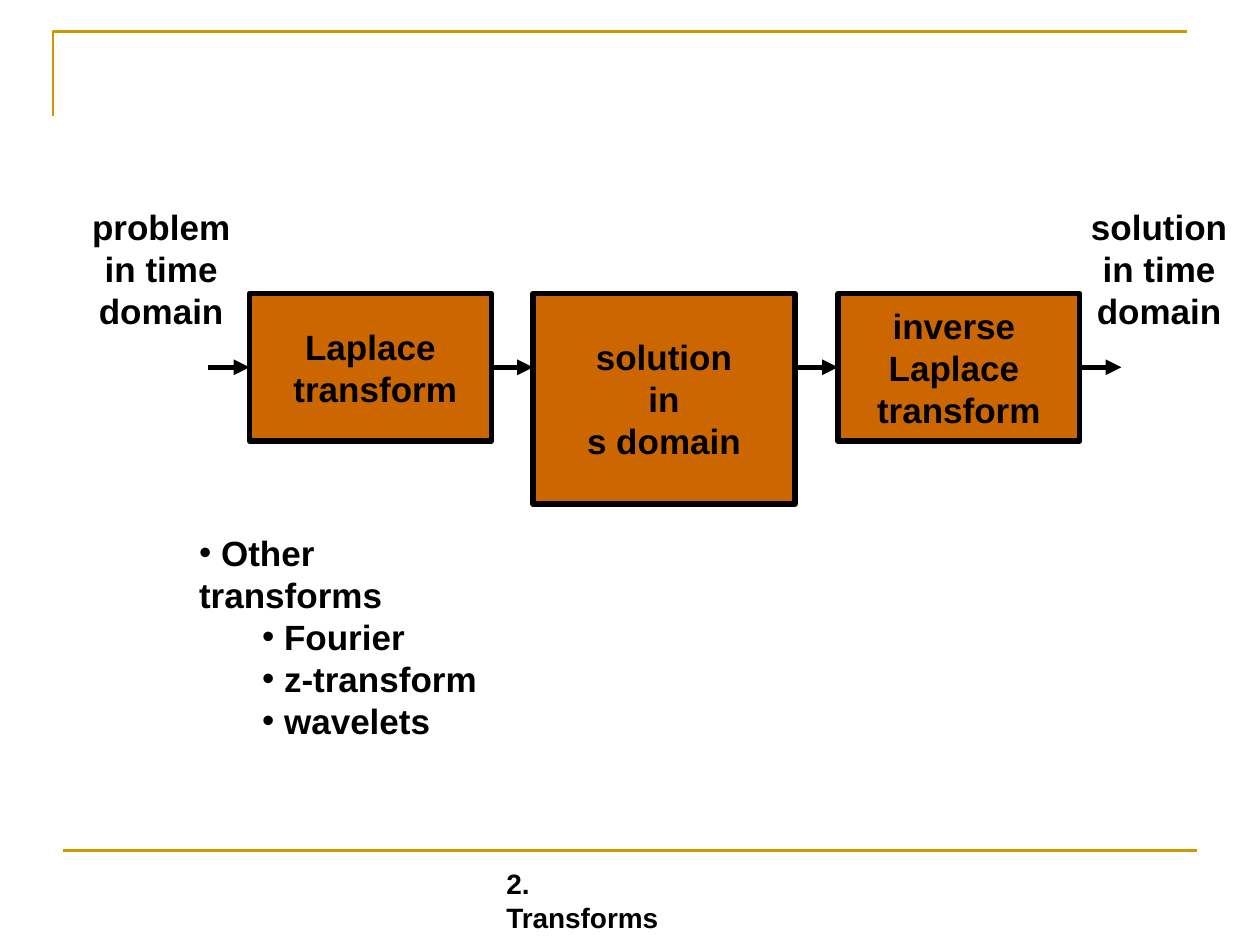
from dataclasses import dataclass

import pptx
import pptx.dml.color
import pptx.enum.shapes
import pptx.enum.text
import pptx.oxml.ns
import pptx.util
from lxml import etree

Inches = pptx.util.Inches
Pt = pptx.util.Pt
RGB = pptx.dml.color.RGBColor
Align = pptx.enum.text.PP_ALIGN
Anchor = pptx.enum.text.MSO_ANCHOR
qn = pptx.oxml.ns.qn


@dataclass(frozen=True)
class Theme:
    font: str = "Arial"
    ink: RGB = RGB(0, 0, 0)
    block: RGB = RGB(0xCC, 0x66, 0x00)
    gold: RGB = RGB(0xCC, 0x99, 0x00)
    text: int = 20
    foot: int = 16
    rule: float = 1.5
    edge: int = 3


@dataclass(frozen=True)
class Box:
    left: float
    top: float
    width: float
    height: float
    lines: tuple[str, ...]

    def place(self) -> tuple[int, ...]:
        return tuple(map(Inches, (self.left, self.top, self.width, self.height)))


@dataclass(frozen=True)
class Item:
    text: str
    level: int = 0


THEME = Theme()
LEFT, EDGE, TOP, GAP = 1.98, 8.57, 2.33, 0.33
SIDE, TALL = 1.92, 1.17
MID = TOP + TALL / 2
LAST = EDGE - SIDE

BLOCKS = (
    Box(LEFT, TOP, SIDE, TALL, ("Laplace", " transform")),
    Box(4.23, TOP, 2.08, 1.67, ("solution", "in", "s domain")),
    Box(LAST, TOP, SIDE, TALL, ("inverse ", "Laplace ", "transform")),
)
LABELS = (
    Box(8.4, 1.58, 1.6, 1.1, ("solution in time", "domain")),
    Box(0.48, 1.58, 1.6, 1.1, ("problem in time domain",)),
)
FOOTER = Box(3.92, 6.83, 1.57, 0.36, ("2. Transforms",))
ITEMS = (
    Item(" Other transforms"),
    Item(" Fourier", 1),
    Item(" z-transform", 1),
    Item(" wavelets", 1),
)


def style(para, size: int, align=None) -> None:
    para.alignment = align
    font = para.font
    font.name, font.size, font.bold = THEME.font, Pt(size), True
    font.color.rgb = THEME.ink


def write(frame, lines: tuple[str, ...], size: int, align=None) -> None:
    frame.text = "\n".join(lines)
    for para in frame.paragraphs:
        style(para, size, align)


def add_block(slide, box: Box):
    shape = slide.shapes.add_shape(
        pptx.enum.shapes.MSO_SHAPE.RECTANGLE, *box.place())
    shape.shadow.inherit = False
    shape.fill.solid()
    shape.fill.fore_color.rgb = THEME.block
    shape.line.color.rgb = THEME.ink
    shape.line.width = Pt(THEME.edge)
    shape.text_frame.word_wrap = False
    shape.text_frame.vertical_anchor = Anchor.MIDDLE
    write(shape.text_frame, box.lines, THEME.text, Align.CENTER)
    return shape


def add_label(slide, box: Box, size: int, align=None) -> None:
    frame = slide.shapes.add_textbox(*box.place()).text_frame
    frame.word_wrap = True
    write(frame, box.lines, size, align)


def add_line(slide, start: float, end: float, y: float, color: RGB, width: float):
    line = slide.shapes.add_connector(
        pptx.enum.shapes.MSO_CONNECTOR.STRAIGHT,
        Inches(start), Inches(y), Inches(end), Inches(y))
    line.line.color.rgb = color
    line.line.width = Pt(width)
    etree.SubElement(line._element.spPr, qn("a:effectLst"))
    return line


def add_arrow(slide, start: float, source=None, target=None) -> None:
    """Draw one flow arrow, joined to the blocks given."""
    line = add_line(slide, start, start + GAP, MID, THEME.ink, THEME.edge)
    etree.SubElement(line.line._get_or_add_ln(), qn("a:tailEnd"), type="triangle")
    if source is not None:
        line.begin_connect(source, 3)
    if target is not None:
        line.end_connect(target, 1)


def add_frame(slide) -> None:
    """Draw the corner line and the rule above the footer."""
    build = slide.shapes.build_freeform(Inches(0.42), Inches(0.92))
    build.add_line_segments(
        [(Inches(0.42), Inches(0.25)), (Inches(9.42), Inches(0.25))], close=False)
    corner = build.convert_to_shape()
    corner.shadow.inherit = False
    corner.fill.background()
    corner.line.color.rgb = THEME.gold
    corner.line.width = Pt(THEME.rule)
    add_line(slide, 0.5, 9.5, 6.75, THEME.gold, THEME.rule)


def fill_list(body) -> None:
    body.left, body.top = Inches(1.48), Inches(4.17)
    body.width, body.height = Inches(2.41), Inches(1.43)
    frame = body.text_frame
    frame.auto_size = pptx.enum.text.MSO_AUTO_SIZE.NONE
    frame.word_wrap = True
    frame.text = "\n".join(item.text for item in ITEMS)
    for para, item in zip(frame.paragraphs, ITEMS):
        para.level = item.level
        para.space_before = Pt(0)
        props = para._p.get_or_add_pPr()
        props.set("marL", str(Inches(0.5 * item.level)))
        props.set("indent", "0")
        etree.SubElement(props, qn("a:buFont"), typeface=THEME.font)
        etree.SubElement(props, qn("a:buChar"), char="•")
        style(para, THEME.text, Align.LEFT)


def main() -> None:
    deck = pptx.Presentation()
    deck.slide_width, deck.slide_height = Inches(10), Inches(7.5)
    slide = deck.slides.add_slide(deck.slide_layouts[1])
    title = slide.shapes.title._element
    title.getparent().remove(title)

    add_frame(slide)
    first, _, last = [add_block(slide, box) for box in BLOCKS]
    add_arrow(slide, LEFT - GAP, target=first)
    add_arrow(slide, LEFT + SIDE, source=first)
    add_arrow(slide, LAST - GAP, target=last)
    add_arrow(slide, EDGE, source=last)
    for label in LABELS:
        add_label(slide, label, THEME.text, Align.CENTER)
    fill_list(slide.placeholders[1])
    add_label(slide, FOOTER, THEME.foot)
    deck.save("out.pptx")


if __name__ == "__main__":
    main()
